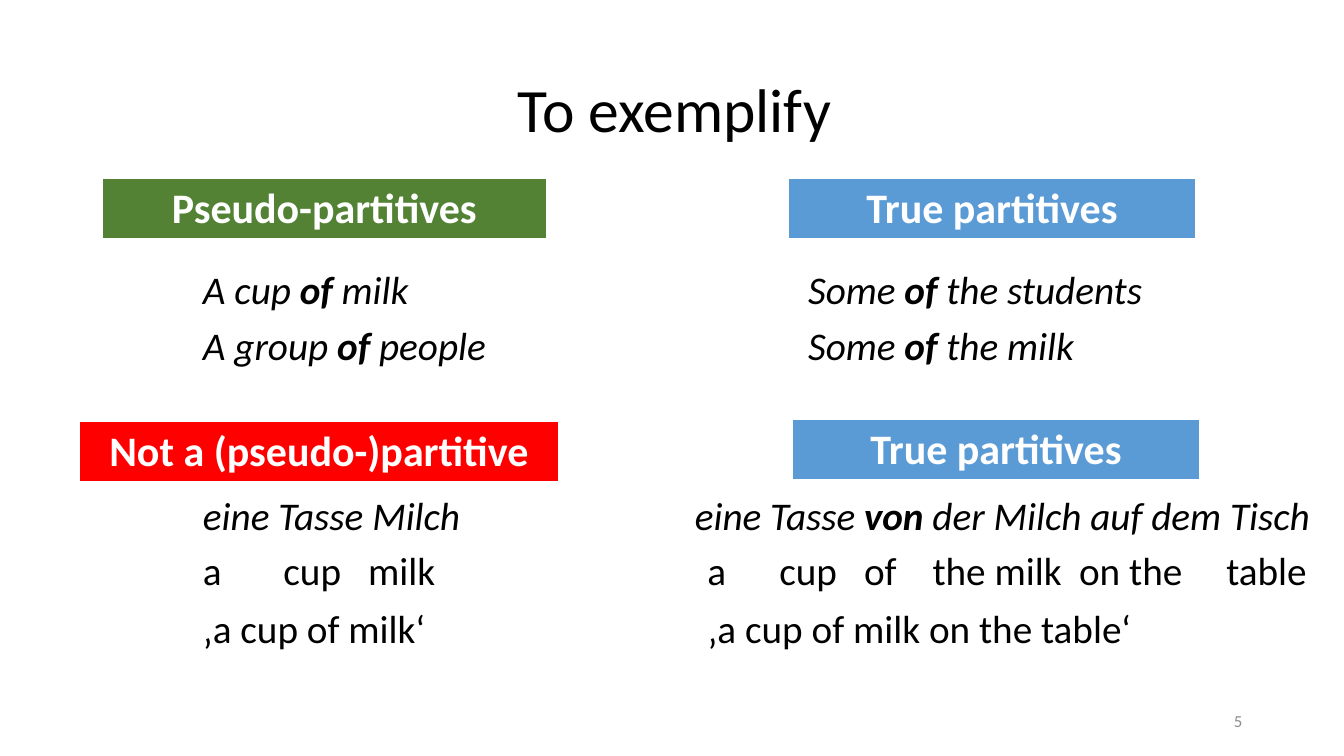
from dataclasses import dataclass

from lxml import etree
from pptx import Presentation, util as u
from pptx.dml.color import RGBColor
from pptx.enum import text
from pptx.oxml import ns

COLORS = {
    "pseudo": "548235",
    "true": "5B9BD5",
    "negative": "FF0000",
    "banner_text": "FFFFFF",
    "ink": "000000",
    "number": "8C8C8C",
}
FONT = "Calibri"
SLIDE_WIDTH = u.Inches(13.33)
SLIDE_HEIGHT = u.Inches(7.5)


@dataclass(frozen=True)
class Box:
    """Position and size in percent of the slide."""

    left: float
    top: float
    width: float
    height: float

    def lengths(self) -> tuple[int, int, int, int]:
        return (across(self.left), down(self.top), across(self.width), down(self.height))


@dataclass(frozen=True)
class Banner:
    label: str
    color: str
    box: Box


@dataclass(frozen=True)
class Example:
    """A line of text; asterisks enclose bold words."""

    line: str
    margin: float = 0
    italic: bool = True
    space_before: float = 10


@dataclass(frozen=True)
class Column:
    box: Box
    examples: tuple[Example, ...]


TITLE_BOX = Box(7.2, 5.07, 85.97, 19.6)
GLOSS_BOX = Box(14.35, 72.37, 84.85, 8)
NUMBER_BOX = Box(70.67, 92.67, 22.5, 5.33)

BANNERS = (
    Banner("Pseudo-partitives", "pseudo", Box(7.6, 23.6, 33.08, 7.8)),
    Banner("True partitives", "true", Box(58.66, 23.6, 30.31, 7.8)),
    Banner("Not a (pseudo-)partitive", "negative", Box(5.93, 55.73, 35.63, 7.8)),
    Banner("True partitives", "true", Box(58.96, 55.47, 30.31, 7.8)),
)

COLUMNS = (
    Column(
        Box(14.35, 35.07, 35, 54.93),
        (
            Example("A cup *of* milk"),
            Example("A group *of* people"),
            Example("eine Tasse Milch", space_before=91),
            Example("‚a cup of milk‘", italic=False, space_before=51),
        ),
    ),
    Column(
        Box(50.95, 35.07, 48.22, 54.93),
        (
            Example("Some *of* the students", margin=8.43),
            Example("Some *of* the milk", margin=8.43),
            Example("eine Tasse *von* der Milch auf dem Tisch", space_before=91),
            Example("‚a cup of milk on the table‘", 0.95, italic=False, space_before=51),
        ),
    ),
)

GLOSS = Example("a\tcup\tmilk\ta\tcup\tof\tthe milk\ton the\ttable", italic=False)
GLOSS_STOPS = (6, 12.3, 37.55, 42.9, 49.2, 54.3, 65.2, 76.15)


def across(percent: float) -> int:
    return round(SLIDE_WIDTH * percent / 100)


def down(percent: float) -> int:
    return round(SLIDE_HEIGHT * percent / 100)


def place(shape, box: Box) -> None:
    shape.left, shape.top, shape.width, shape.height = box.lengths()


def style(paragraph, size: float, color: str, bold: bool = False, italic: bool = False) -> None:
    font = paragraph.font
    font.name = FONT
    font.size = u.Pt(size)
    font.bold = bold
    font.italic = italic
    font.color.rgb = RGBColor.from_string(COLORS[color])


def add_title(slide) -> None:
    title = slide.shapes.title
    place(title, TITLE_BOX)
    frame = title.text_frame
    frame.text = "To exemplify"
    frame.auto_size = text.MSO_AUTO_SIZE.NONE
    frame.vertical_anchor = text.MSO_ANCHOR.MIDDLE
    paragraph = frame.paragraphs[0]
    paragraph.alignment = text.PP_ALIGN.CENTER
    paragraph.line_spacing = 0.9
    style(paragraph, 44, "ink")


def write_example(paragraph, example: Example, stops: tuple[float, ...] = ()) -> None:
    paragraph.line_spacing = 0.9
    paragraph.space_before = u.Pt(example.space_before)
    properties = paragraph._p.get_or_add_pPr()
    properties.set("marL", str(across(example.margin)))
    if stops:
        tabs = etree.SubElement(properties, ns.qn("a:tabLst"))
        for stop in stops:
            etree.SubElement(tabs, ns.qn("a:tab"), pos=str(across(stop)), algn="l")
    else:
        properties.set("indent", "0")
        etree.SubElement(properties, ns.qn("a:buNone"))
    style(paragraph, 28, "ink", italic=example.italic)
    for index, piece in enumerate(example.line.split("*")):
        if piece:
            run = paragraph.add_run()
            run.text = piece
            if index % 2:
                run.font.bold = True


def fill_column(body, column: Column) -> None:
    place(body, column.box)
    frame = body.text_frame
    frame.auto_size = text.MSO_AUTO_SIZE.NONE
    for index, example in enumerate(column.examples):
        write_example(frame.add_paragraph() if index else frame.paragraphs[0], example)


def add_gloss(slide) -> None:
    frame = slide.shapes.add_textbox(*GLOSS_BOX.lengths()).text_frame
    frame.word_wrap = True
    write_example(frame.paragraphs[0], GLOSS, GLOSS_STOPS)


def add_banner(slide, banner: Banner) -> None:
    table = slide.shapes.add_table(1, 1, *banner.box.lengths()).table
    cell = table.cell(0, 0)
    cell.fill.solid()
    cell.fill.fore_color.rgb = RGBColor.from_string(COLORS[banner.color])
    cell.vertical_anchor = text.MSO_ANCHOR.MIDDLE
    cell.text = banner.label
    paragraph = cell.text_frame.paragraphs[0]
    paragraph.alignment = text.PP_ALIGN.CENTER
    style(paragraph, 30, "banner_text", bold=True)


def add_number(slide) -> None:
    frame = slide.shapes.add_textbox(*NUMBER_BOX.lengths()).text_frame
    frame.word_wrap = True
    frame.vertical_anchor = text.MSO_ANCHOR.MIDDLE
    frame.text = "5"
    paragraph = frame.paragraphs[0]
    paragraph.alignment = text.PP_ALIGN.RIGHT
    style(paragraph, 12, "number")


def main() -> None:
    presentation = Presentation()
    presentation.slide_width = SLIDE_WIDTH
    presentation.slide_height = SLIDE_HEIGHT
    slide = presentation.slides.add_slide(presentation.slide_layouts[3])
    add_title(slide)
    for index, column in enumerate(COLUMNS, start=1):
        fill_column(slide.placeholders[index], column)
    add_gloss(slide)
    for banner in BANNERS:
        add_banner(slide, banner)
    add_number(slide)
    presentation.save("out.pptx")


if __name__ == "__main__":
    main()
